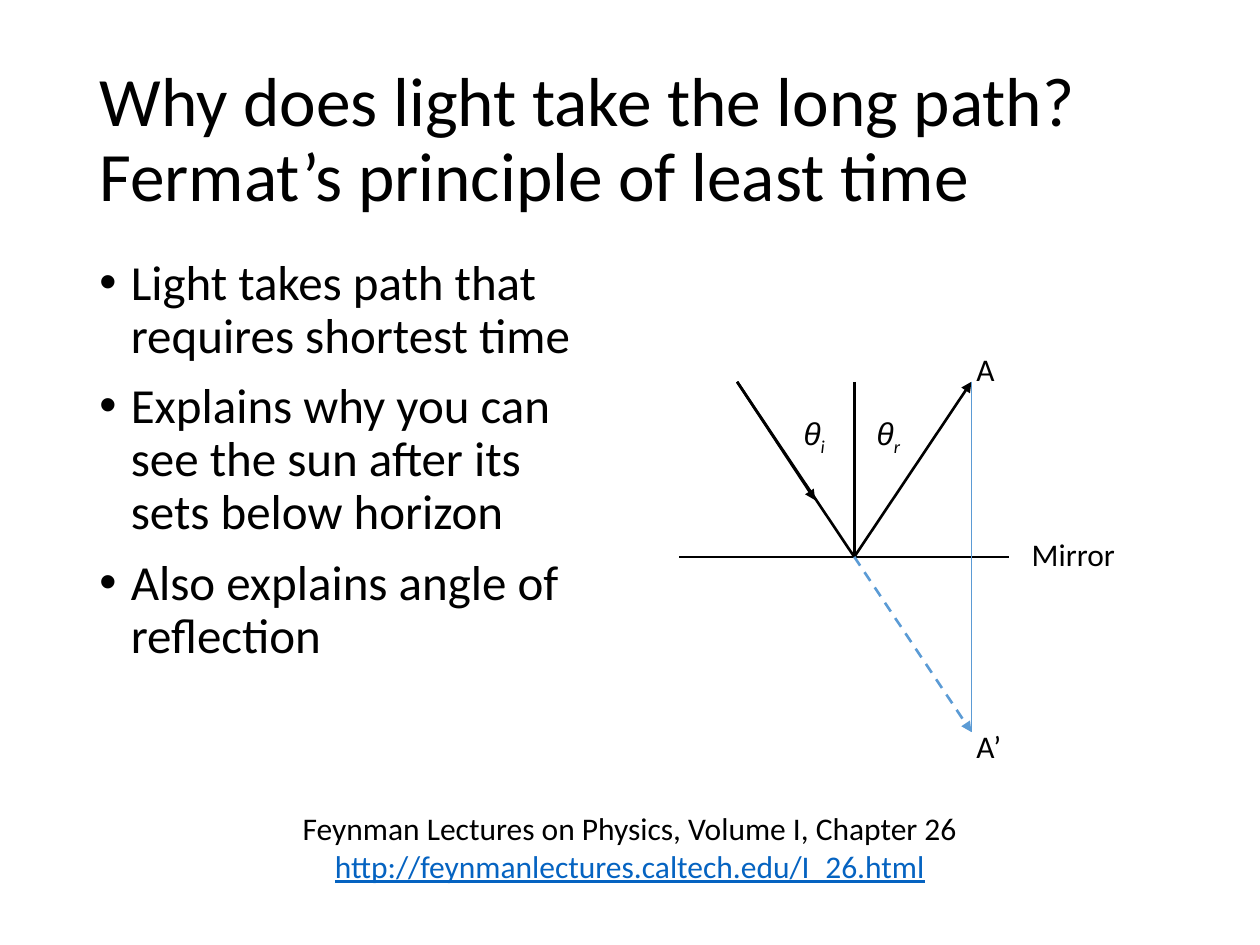
from lxml.etree import SubElement
from pptx import Presentation
from pptx.dml.color import RGBColor
from pptx.enum.dml import MSO_LINE
from pptx.enum.shapes import MSO_CONNECTOR
from pptx.enum.text import MSO_ANCHOR, MSO_AUTO_SIZE, PP_ALIGN
from pptx.oxml.ns import qn
from pptx.util import Inches, Pt

COLORS = {"ink": "000000", "link": "0563C1", "virtual": "5B9BD5"}

# Content
TITLE = ["Why does light take the long path?", "Fermat’s principle of least time"]
POINTS = [
    "Light takes path that requires shortest time",
    "Explains why you can see the sun after its sets below horizon",
    "Also explains angle of reflection",
]
CITATION = "Feynman Lectures on Physics, Volume I, Chapter 26"
ADDRESS = "http://feynmanlectures.caltech.edu/I_26.html"

# Ray geometry: equal angles on both sides of the normal
HIT_X, MIRROR_Y = 6.78, 4.42
RUN, RISE = 0.93, 1.39
HIT = (HIT_X, MIRROR_Y)
SOURCE = (HIT_X - RUN, MIRROR_Y - RISE)
POINT_A = (HIT_X + RUN, MIRROR_Y - RISE)
IMAGE_A = (HIT_X + RUN, MIRROR_Y + RISE)
NORMAL_TOP = (HIT_X, MIRROR_Y - RISE)
MIDWAY = (6.47, 3.97)

# start, end, colour, width, arrow, dashed
RAYS = [
    (SOURCE, MIDWAY, "ink", 1.5, True, False),
    ((5.39, MIRROR_Y), (8.01, MIRROR_Y), "ink", 1.5, False, False),
    (NORMAL_TOP, HIT, "ink", 1.5, False, False),
    (HIT, POINT_A, "ink", 1.5, True, False),
    (SOURCE, HIT, "ink", 1.5, False, False),
    (HIT, IMAGE_A, "virtual", 1.5, True, True),
    (POINT_A, IMAGE_A, "virtual", 0.5, False, False),
]
# text, left, top, width
LABELS = [
    ("Mirror", 8.09, 4.2, 0.87),
    ("A", 7.65, 2.73, 0.35),
    ("A’", 7.65, 5.72, 0.4),
]
# subscript, left, width
ANGLES = [("i", 6.28, 0.37), ("r", 6.86, 0.39)]


def rgb(name):
    return RGBColor.from_string(COLORS[name])


def add_run(paragraph, text, size=18, font="Calibri", color="ink"):
    run = paragraph.add_run()
    run.text = text
    run.font.size = Pt(size)
    run.font.name = font
    run.font.color.rgb = rgb(color)
    return run


def add_box(slide, left, top, width, height=0.4, wrap=False):
    box = slide.shapes.add_textbox(*map(Inches, (left, top, width, height)))
    frame = box.text_frame
    frame.word_wrap = wrap
    frame.auto_size = MSO_AUTO_SIZE.NONE if wrap else MSO_AUTO_SIZE.SHAPE_TO_FIT_TEXT
    return frame


def add_title(slide):
    title = slide.shapes.title
    title.left, title.top = Inches(0.69), Inches(0.4)
    title.width, title.height = Inches(8.62), Inches(1.45)
    frame = title.text_frame
    frame.auto_size = MSO_AUTO_SIZE.NONE
    frame.vertical_anchor = MSO_ANCHOR.MIDDLE
    heading = frame.paragraphs[0]
    heading.alignment = PP_ALIGN.LEFT
    heading.line_spacing = 0.9
    for index, line in enumerate(TITLE):
        if index:
            heading.add_line_break()
        add_run(heading, line, 39.6)


def add_points(slide):
    frame = add_box(slide, 0.69, 2, 4.25, 4.76, wrap=True)
    for index, text in enumerate(POINTS):
        point = frame.add_paragraph() if index else frame.paragraphs[0]
        props = point._p.get_or_add_pPr()
        props.set("marL", str(Inches(0.25)))
        props.set("indent", str(-Inches(0.25)))
        point.line_spacing = 0.9
        if index:
            point.space_before = Pt(10)
        SubElement(props, qn("a:buFont")).set("typeface", "Arial")
        SubElement(props, qn("a:buChar")).set("char", "•")
        add_run(point, text, 28)


def add_reference(slide):
    frame = add_box(slide, 2.27, 6.37, 5.46, 0.71)
    citation, address = frame.paragraphs[0], frame.add_paragraph()
    citation.alignment = address.alignment = PP_ALIGN.CENTER
    add_run(citation, CITATION)
    add_run(address, ADDRESS, color="link").font.underline = True


def add_ray(slide, start, end, color, width, arrow, dashed):
    ray = slide.shapes.add_connector(
        MSO_CONNECTOR.STRAIGHT, *map(Inches, (*start, *end)))
    ray.line.color.rgb = rgb(color)
    ray.line.width = Pt(width)
    if dashed:
        ray.line.dash_style = MSO_LINE.DASH
    if arrow:
        SubElement(ray.line._get_or_add_ln(), qn("a:tailEnd")).set("type", "triangle")
    SubElement(ray._element.spPr, qn("a:effectLst"))


def add_angle(slide, subscript, left, width):
    paragraph = add_box(slide, left, 3.24, width).paragraphs[0]
    theta = add_run(paragraph, "θ", font="Arial")
    index = add_run(paragraph, subscript)
    theta.font.italic = index.font.italic = True
    index._r.get_or_add_rPr().set("baseline", "-25000")


def main():
    deck = Presentation()
    deck.slide_width, deck.slide_height = Inches(10), Inches(7.5)
    slide = deck.slides.add_slide(deck.slide_layouts[5])

    # Text
    add_title(slide)
    add_points(slide)
    add_reference(slide)

    # Reflection diagram
    for ray in RAYS:
        add_ray(slide, *ray)
    for angle in ANGLES:
        add_angle(slide, *angle)
    for text, left, top, width in LABELS:
        add_run(add_box(slide, left, top, width).paragraphs[0], text)

    deck.save("out.pptx")


if __name__ == "__main__":
    main()
